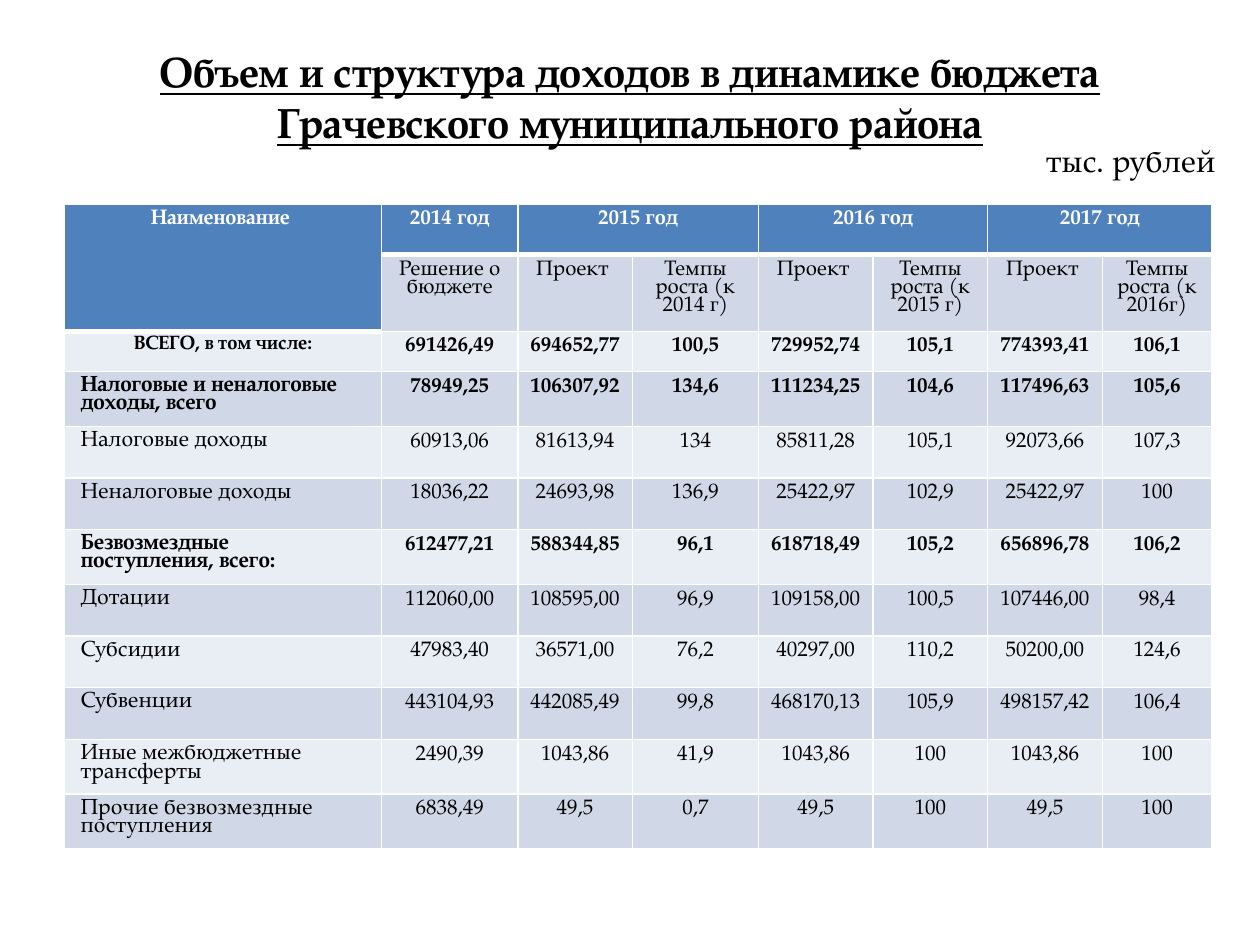
from lxml.etree import SubElement
from pptx import Presentation
from pptx.dml.color import RGBColor
from pptx.enum.text import MSO_ANCHOR, PP_ALIGN
from pptx.oxml.ns import qn
from pptx.util import Inches, Pt

FONT = "TeX Gyre Pagella"
COLORS = {"header": "4F81BD", "dark_band": "D0D8E8", "light_band": "E9EDF4",
          "white": "FFFFFF", "black": "000000"}


def style(para, size, color="black", bold=False, align=PP_ALIGN.CENTER):
    para.alignment = align
    para.font.name = FONT
    para.font.size = Pt(size)
    para.font.bold = bold
    para.font.color.rgb = RGBColor.from_string(COLORS[color])


def add_border(cell, side, width):
    line = SubElement(cell._tc.get_or_add_tcPr(), qn("a:ln" + side), w=str(Pt(width)))
    fill = SubElement(line, qn("a:solidFill"))
    SubElement(fill, qn("a:srgbClr"), val=COLORS["white"])


deck = Presentation()
deck.slide_width, deck.slide_height = Inches(10), Inches(7.5)
page = deck.slides.add_slide(deck.slide_layouts[6])

# Title and unit of measure
captions = [
    ("Объем и структура доходов в динамике бюджета Грачевского муниципального района",
     (0.5, 0.3, 9, 0.93), 24, True),
    ("тыс. рублей", (8.15, 1.07, 1.65, 0.39), 18, False),
]
for text, place, size, is_title in captions:
    box = page.shapes.add_textbox(*map(Inches, place))
    box.text_frame.word_wrap = True
    box.text_frame.vertical_anchor = MSO_ANCHOR.MIDDLE
    para = box.text_frame.paragraphs[0]
    para.text = text
    style(para, size, bold=is_title)
    para.font.underline = is_title

# Budget figures
rows = [
    ["Наименование ", "2014 год", "2015 год", "", "2016 год", "", "2017 год", ""],
    ["", "Решение о бюджете", "Проект ", "Темпы роста (к 2014 г)",
     "Проект ", "Темпы роста (к 2015 г)", "Проект ", "Темпы роста (к 2016г)"],
    ["ВСЕГО, в том числе:", "691426,49", "694652,77", "100,5",
     "729952,74", "105,1", "774393,41", "106,1"],
    ["Налоговые и неналоговые доходы, всего", "78949,25", "106307,92", "134,6",
     "111234,25", "104,6", "117496,63", "105,6"],
    ["Налоговые доходы", "60913,06", "81613,94", "134",
     "85811,28", "105,1", "92073,66", "107,3"],
    ["Неналоговые доходы", "18036,22", "24693,98", "136,9",
     "25422,97", "102,9", "25422,97", "100"],
    ["Безвозмездные поступления, всего:", "612477,21", "588344,85", "96,1",
     "618718,49", "105,2", "656896,78", "106,2"],
    ["Дотации", "112060,00", "108595,00", "96,9",
     "109158,00", "100,5", "107446,00", "98,4"],
    ["Субсидии", "47983,40", "36571,00", "76,2",
     "40297,00", "110,2", "50200,00", "124,6"],
    ["Субвенции", "443104,93", "442085,49", "99,8",
     "468170,13", "105,9", "498157,42", "106,4"],
    ["Иные межбюджетные трансферты", "2490,39", "1043,86", "41,9",
     "1043,86", "100", "1043,86", "100"],
    ["Прочие безвозмездные поступления", "6838,49", "49,5", "0,7",
     "49,5", "100", "49,5", "100"],
]
column_widths = [2.52, 1.08, 0.91, 1, 0.91, 0.91, 0.91, 0.87]
row_heights = [0.4, 0.6, 0.32] + [0.41] * 9
total_rows = {2, 3, 6}

# Table grid
table = page.shapes.add_table(
    len(rows), len(column_widths), Inches(0.51), Inches(1.62),
    Inches(sum(column_widths)), Inches(sum(row_heights))).table
for column, width in zip(table.columns, column_widths):
    column.width = Inches(width)
for row, height in zip(table.rows, row_heights):
    row.height = Inches(height)
table.cell(0, 0).merge(table.cell(1, 0))
for first in (2, 4, 6):
    table.cell(0, first).merge(table.cell(0, first + 1))

# Cell text, borders and bands
for r, values in enumerate(rows):
    for c, text in enumerate(values):
        cell = table.cell(r, c)
        is_header = r == 0 or (r == 1 and c == 0)
        is_name = c == 0 and r > 1
        for side in "LRTB":
            thick = (side == "B" and is_header) or (side == "T" and r == 1)
            add_border(cell, side, 3 if thick else 1)
        band = "header" if is_header else "dark_band" if r % 2 else "light_band"
        cell.fill.solid()
        cell.fill.fore_color.rgb = RGBColor.from_string(COLORS[band])
        if is_name:
            cell.margin_left = cell.margin_right = Inches(0.13)
            cell.margin_top = cell.margin_bottom = Inches(0.04)
        if cell.is_spanned:
            continue
        para = cell.text_frame.paragraphs[0]
        para.text = text
        para.line_spacing = 0.85
        size = 12 if not is_name else 11 if r == 2 else 12.5
        align = PP_ALIGN.LEFT if is_name and r > 2 else PP_ALIGN.CENTER
        style(para, size, "white" if is_header else "black",
              is_header or r in total_rows, align)

deck.save("out.pptx")
